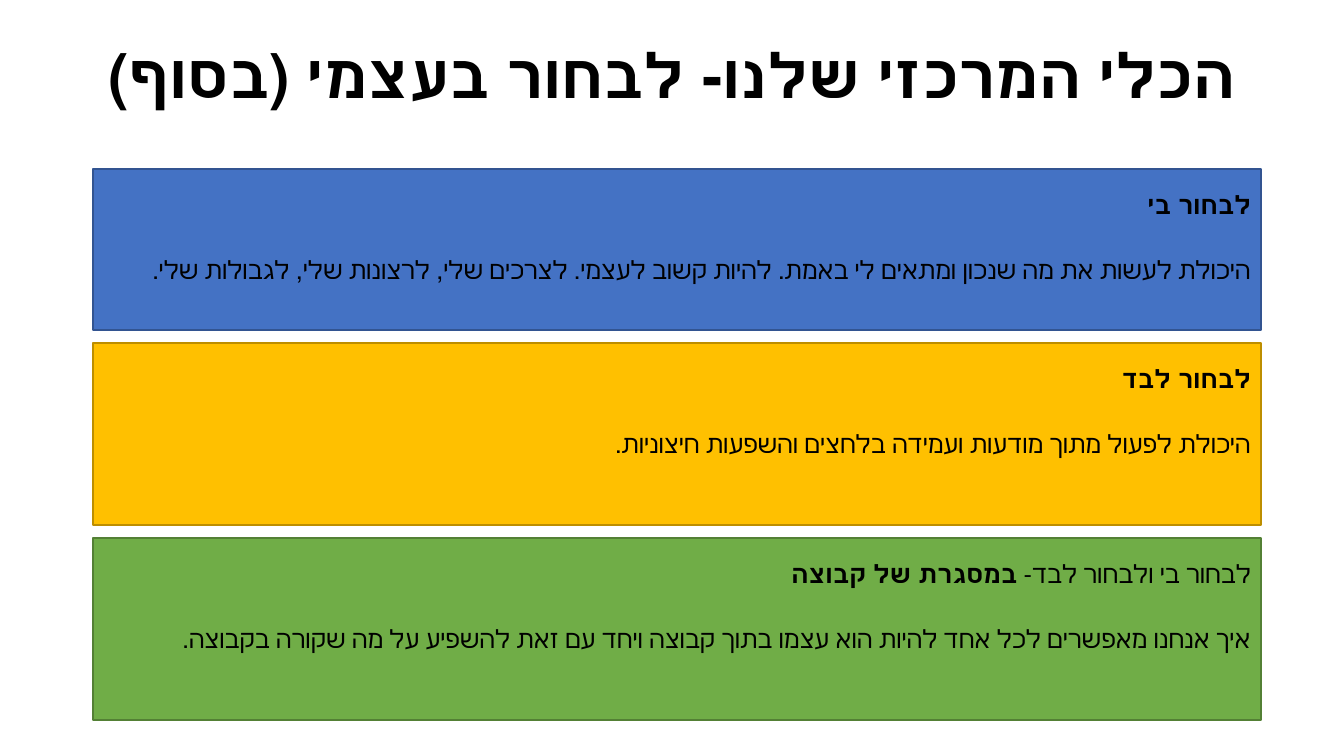
"""Build a Hebrew slide with a title and three stacked colour panels."""
import pptx
import pptx.util
import pptx.dml.color
import pptx.enum.shapes
import pptx.enum.text

TITLE = "הכלי המרכזי שלנו- לבחור בעצמי (בסוף)"
PANELS = [
    (161, "4472C4", "325491", [
        [("לבחור בי", True)],
        [("היכולת לעשות את מה שנכון ומתאים לי באמת. להיות קשוב לעצמי. "
          "לצרכים שלי, לרצונות שלי, לגבולות שלי.", False)]]),
    (182, "FFC000", "BD8E00", [
        [("לבחור לבד", True)],
        [("היכולת לפעול מתוך מודעות ועמידה בלחצים והשפעות חיצוניות.", False)]]),
    (182, "70AD47", "538035", [
        [("לבחור בי ולבחור לבד- ", False), ("במסגרת של קבוצה", True)],
        [("איך אנחנו מאפשרים לכל אחד להיות הוא עצמו בתוך קבוצה "
          "ויחד עם זאת להשפיע על מה שקורה בקבוצה.", False)]]),
]
LEFT, TOP, WIDTH, GAP = 93, 169, 1168, 13
ALIGN = pptx.enum.text.PP_ALIGN


def px(num):
    return round(num * 914400 / 100.8)


def color(code):
    return pptx.dml.color.RGBColor.from_string(code)


def write(frame, paras, font, size, align, lead, before=0, after=0):
    frame.word_wrap = True
    frame.vertical_anchor = pptx.enum.text.MSO_ANCHOR.TOP
    for i, runs in enumerate(paras):
        para = frame.add_paragraph() if i else frame.paragraphs[0]
        para.alignment = align
        para.line_spacing = lead
        para.space_before = pptx.util.Pt(before)
        para.space_after = pptx.util.Pt(after)
        para._p.get_or_add_pPr().set("rtl", "1")
        for text, bold in runs:
            run = para.add_run()
            run.text = text
            run.font.name = font
            run.font.size = pptx.util.Pt(size)
            run.font.bold = bold
            run.font.color.rgb = color("000000")


deck = pptx.Presentation()
deck.slide_width, deck.slide_height = px(1344), px(756)
slide = deck.slides.add_slide(deck.slide_layouts[6])

title = slide.shapes.add_textbox(px(LEFT), px(40), px(1159), px(146)).text_frame
title.margin_top = px(5)
write(title, [[(TITLE, True)]], font="Roboto", size=44, align=ALIGN.CENTER, lead=0.9)

top = TOP
for high, fill, edge, paras in PANELS:
    panel = slide.shapes.add_shape(pptx.enum.shapes.MSO_SHAPE.RECTANGLE,
                                   px(LEFT), px(top), px(WIDTH), px(high))
    panel.shadow.inherit = False
    panel.fill.solid()
    panel.fill.fore_color.rgb = color(fill)
    panel.line.color.rgb = color(edge)
    panel.line.width = pptx.util.Pt(1)
    write(panel.text_frame, paras, font="Calibri", size=18,
          align=ALIGN.JUSTIFY, lead=1.5, before=6, after=8)
    top += high + GAP

deck.save("out.pptx")
